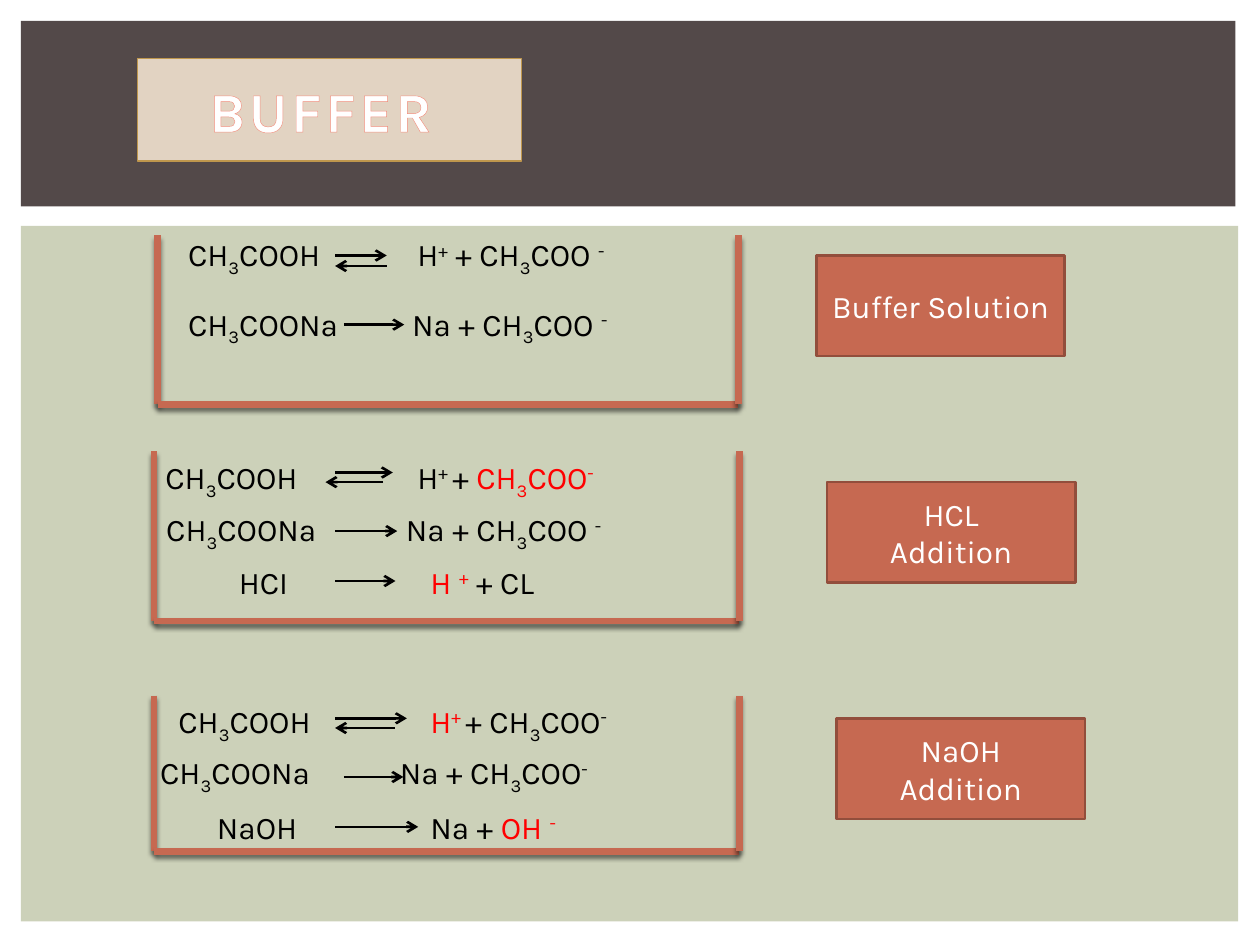
import pptx
import pptx.dml.color
import pptx.enum.shapes
import pptx.enum.text
import pptx.oxml
import pptx.oxml.ns
import pptx.util
from lxml import etree

Pt = pptx.util.Pt
RGBColor = pptx.dml.color.RGBColor
qn = pptx.oxml.ns.qn
RECTANGLE = pptx.enum.shapes.MSO_SHAPE.RECTANGLE
STRAIGHT = pptx.enum.shapes.MSO_CONNECTOR.STRAIGHT
CENTER = pptx.enum.text.PP_ALIGN.CENTER
MIDDLE = pptx.enum.text.MSO_ANCHOR.MIDDLE

BLACK = RGBColor(0x00, 0x00, 0x00)
WHITE = RGBColor(0xFF, 0xFF, 0xFF)
RED = RGBColor(0xFF, 0x00, 0x00)
SAGE = RGBColor(0xCC, 0xD1, 0xB9)
BROWN = RGBColor(0x53, 0x49, 0x49)
SAND = RGBColor(0xE2, 0xD3, 0xC2)
GOLD = RGBColor(0xBF, 0x97, 0x4D)
RUST = RGBColor(0xC6, 0x69, 0x51)
DARK_RUST = RGBColor(0x92, 0x4E, 0x3C)
CORAL = RGBColor(0xF2, 0x8D, 0x7C)

BASELINES = {"_": -25000, "^": 30000}

PANELS = [
    (12, 129, 695.5, 397.5, SAGE),
    (12, 12, 694, 106, BROWN),
]
BEAKERS = [
    (90, 422, 134.5, 231),
    (88, 422.5, 258, 355),
    (88, 422.5, 397.5, 486.5),
]
# "|" is not needed in the wording, so it separates the spans of an equation.
EQUATIONS = [
    (107.5, 238.5, 131, "CH|_3|COOH\tH|^+| + CH|_3|COO |^-"),
    (107.5, 235.5, 170.5, "CH|_3|COONa\tNa + CH|_3|COO |^-"),
    (94.5, 238.5, 258, "CH|_3|COOH\tH|^+ |+ |!CH|!_3|!COO|!^-"),
    (95, 232, 288, "CH|_3|COONa\tNa + CH|_3|COO |^-"),
    (136.5, 246, 318, "HCI\t|!H |!^+| + CL"),
    (102, 246, 397.5, "CH|_3|COOH\t|!H|!^+ |+ CH|_3|COO|^-"),
    (91.5, 228.5, 427, "CH|_3|COONa\tNa + CH|_3|COO|^-"),
    (124, 246, 458, "NaOH\tNa + |!OH |!^-"),
]
ARROWS = [
    (191.5, 221, 146),
    (221, 191.5, 152),
    (196.5, 231, 185.5),
    (191.5, 224.5, 270),
    (219, 186, 275.5),
    (191.5, 227, 303.5),
    (191.5, 226, 332),
    (191.5, 232.5, 410.5),
    (225.5, 191.5, 416),
    (196.5, 230.5, 444),
    (191.5, 239, 472.5),
]
LABELS = [
    (466.5, 146, "Buffer Solution"),
    (472.5, 275.5, "HCL\nAddition"),
    (478, 410.5, "NaOH\nAddition"),
]


class BufferSlide:
    font = "Karla"
    size = Pt(18)

    def __init__(self, page):
        self.page = page

    def style(self, font, color, size=None):
        font.name = self.font
        font.size = size or self.size
        font.color.rgb = color

    def rectangle(self, left, top, width, height, color):
        box = self.page.shapes.add_shape(RECTANGLE, Pt(left), Pt(top), Pt(width), Pt(height))
        box.shadow.inherit = False
        box.fill.solid()
        box.fill.fore_color.rgb = color
        box.line.fill.background()
        return box

    def title(self, text):
        box = self.page.shapes.title
        self.page.shapes.element.append(box.element)
        box.left, box.top, box.width, box.height = Pt(78.5), Pt(33.5), Pt(219.5), Pt(58.5)
        box.fill.solid()
        box.fill.fore_color.rgb = SAND
        box.line.color.rgb = GOLD
        box.line.width = Pt(0.79)
        box.text_frame.text = text
        box.text_frame.vertical_anchor = MIDDLE
        para = box.text_frame.paragraphs[0]
        para.alignment = CENTER
        span = para.runs[0]
        self.style(span.font, WHITE, Pt(32))
        span.font.bold = True
        properties = span._r.get_or_add_rPr()
        properties.set("spc", "200")
        outline = etree.Element(qn("a:ln"), w=str(Pt(2.48)))
        fill = etree.SubElement(outline, qn("a:solidFill"))
        etree.SubElement(fill, qn("a:srgbClr"), val=str(CORAL))
        properties.insert(0, outline)

    def line(self, start_x, start_y, end_x, end_y, color, width):
        line = self.page.shapes.add_connector(
            STRAIGHT, Pt(start_x), Pt(start_y), Pt(end_x), Pt(end_y))
        line.line.color.rgb = color
        line.line.width = Pt(width)
        effects = etree.SubElement(line.element.spPr, qn("a:effectLst"))
        return line, effects

    def beaker(self, left, right, top, bottom):
        corners = [(left, top), (left, bottom), (right, bottom), (right, top)]
        for start, end in zip(corners, corners[1:]):
            effects = self.line(*start, *end, RUST, 3.75)[1]
            shadow = etree.SubElement(
                effects, qn("a:outerShdw"), blurRad=str(Pt(2.5)), dist=str(Pt(2)),
                dir="5400000", rotWithShape="0")
            color = etree.SubElement(shadow, qn("a:srgbClr"), val=str(BLACK))
            etree.SubElement(color, qn("a:alpha"), val="50000")

    def arrow(self, start, end, height):
        line = self.line(start, height, end, height, BLACK, 1.5)[0]
        etree.SubElement(line.element.spPr.find(qn("a:ln")), qn("a:tailEnd"), type="arrow")

    def equation(self, left, product, top, markup):
        box = self.page.shapes.add_textbox(Pt(left), Pt(top), Pt(420 - left), Pt(29))
        box.text_frame.word_wrap = True
        box.text_frame.margin_left = 0
        para = box.text_frame.paragraphs[0]
        tabs = etree.SubElement(para._p.get_or_add_pPr(), qn("a:tabLst"))
        etree.SubElement(tabs, qn("a:tab"), pos=str(Pt(product - left)), algn="l")
        for piece in markup.split("|"):
            color = RED if piece.startswith("!") else BLACK
            piece = piece.removeprefix("!")
            baseline = BASELINES.get(piece[0])
            span = para.add_run()
            span.text = piece[1:] if baseline else piece
            self.style(span.font, color)
            if baseline:
                span._r.get_or_add_rPr().set("baseline", str(baseline))

    def label(self, left, top, text):
        box = self.rectangle(left, top, 142, 57.5, RUST)
        box.line.color.rgb = DARK_RUST
        box.line.width = Pt(1.5)
        box.text_frame.text = text
        box.text_frame.word_wrap = True
        box.text_frame.vertical_anchor = MIDDLE
        for para in box.text_frame.paragraphs:
            para.alignment = CENTER
            self.style(para.runs[0].font, WHITE)


def main():
    deck = pptx.Presentation()
    deck.slide_width, deck.slide_height = Pt(720), Pt(540)
    slide = BufferSlide(deck.slides.add_slide(deck.slide_layouts[5]))
    for panel in PANELS:
        slide.rectangle(*panel)
    slide.title("BUFFER ")
    for equation in EQUATIONS:
        slide.equation(*equation)
    for beaker in BEAKERS:
        slide.beaker(*beaker)
    for arrow in ARROWS:
        slide.arrow(*arrow)
    for label in LABELS:
        slide.label(*label)
    deck.save("out.pptx")


if __name__ == "__main__":
    main()
